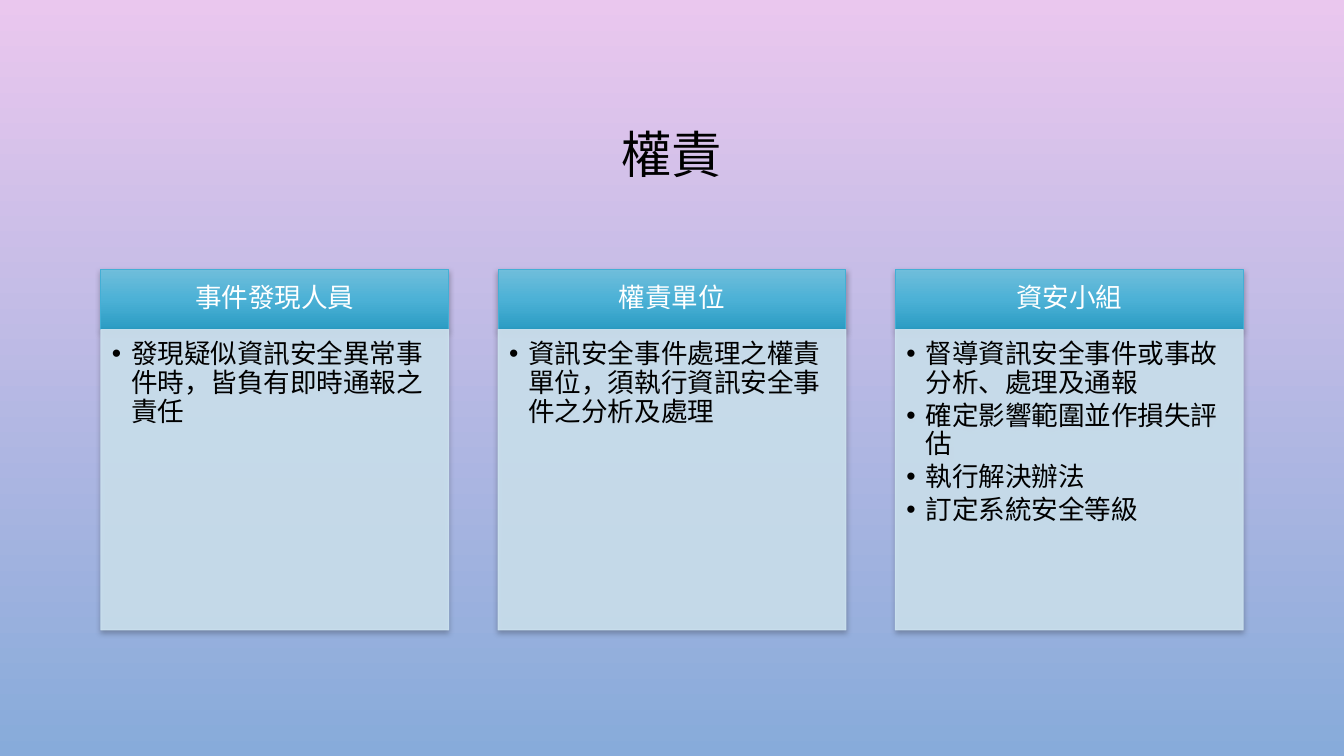
"""Build a slide that sets out who is responsible for security incidents."""
import copy

import lxml.etree
import pptx
import pptx.dml.color
import pptx.enum.shapes
import pptx.enum.text
import pptx.oxml.ns
import pptx.util

Inches, Pt = pptx.util.Inches, pptx.util.Pt
ALIGN, ANCHOR = pptx.enum.text.PP_ALIGN, pptx.enum.text.MSO_ANCHOR
RECTANGLE = pptx.enum.shapes.MSO_SHAPE.RECTANGLE
qn = pptx.oxml.ns.qn
rgb = pptx.dml.color.RGBColor.from_string

COLORS = {
    "sky_top": "EAC7EE", "sky_bottom": "87ABDA",
    "header_top": "70BEDB", "header_middle": "4CB1D6", "header_bottom": "2B9CC3",
    "header_line": "43AFD5", "duties": "CDE3F0",
    "dark": "000000", "light": "FFFFFF",
}
ROLES = [
    ("事件發現人員", ["發現疑似資訊安全異常事件時，皆負有即時通報之責任"]),
    ("權責單位", ["資訊安全事件處理之權責單位，須執行資訊安全事件之分析及處理"]),
    ("資安小組", ["督導資訊安全事件或事故分析、處理及通報", "確定影響範圍並作損失評估",
              "執行解決辦法", "訂定系統安全等級"]),
]
LEFT, TOP, WIDTH, PITCH = 1, 2.67, 3.45, 3.94
HEADER_HEIGHT, DUTIES_HEIGHT = 0.6, 2.98


def write(paragraph, text, size, color, align):
    """Fill a paragraph with one formatted run."""
    paragraph.alignment = align
    paragraph.line_spacing = 0.9
    run = paragraph.add_run()
    run.text = text
    run.font.name = "Arial"
    run.font.size = Pt(size)
    run.font.color.rgb = rgb(COLORS[color])


def set_frame(frame, anchor, left, top, right, bottom):
    """Set wrapping, anchor and insets of a text frame."""
    frame.word_wrap = True
    frame.auto_size = pptx.enum.text.MSO_AUTO_SIZE.NONE
    frame.vertical_anchor = anchor
    frame.margin_left, frame.margin_top = Inches(left), Inches(top)
    frame.margin_right, frame.margin_bottom = Inches(right), Inches(bottom)


deck = pptx.Presentation()
deck.slide_width, deck.slide_height = Inches(13.33), Inches(7.5)
slide = deck.slides.add_slide(deck.slide_layouts[5])

sky = slide.background.fill
sky.gradient()
sky.gradient_angle = 270
for stop, color in zip(sky.gradient_stops, ("sky_top", "sky_bottom")):
    stop.color.rgb = rgb(COLORS[color])

title = slide.shapes.title
title.left, title.top = Inches(1), Inches(0.68)
title.width, title.height = Inches(11.33), Inches(1.75)
set_frame(title.text_frame, ANCHOR.MIDDLE, 0.1, 0.05, 0.1, 0.05)
write(title.text_frame.paragraphs[0], "權責", 36, "dark", ALIGN.CENTER)

for column, (role, duties) in enumerate(ROLES):
    left = Inches(LEFT + column * PITCH)
    header = slide.shapes.add_shape(
        RECTANGLE, left, Inches(TOP), Inches(WIDTH), Inches(HEADER_HEIGHT))
    header.fill.gradient()
    header.fill.gradient_angle = 270
    stop_list = next(header._element.spPr.iter(qn("a:gsLst")))
    stop_list.insert(1, copy.deepcopy(stop_list[0]))
    shades = ("header_top", "header_middle", "header_bottom")
    for step, (stop, color) in enumerate(zip(header.fill.gradient_stops, shades)):
        stop.position = step / 2
        stop.color.rgb = rgb(COLORS[color])
    header.line.color.rgb = rgb(COLORS["header_line"])
    set_frame(header.text_frame, ANCHOR.MIDDLE, 0.15, 0.08, 0.15, 0.08)
    write(header.text_frame.paragraphs[0], role, 19, "light", ALIGN.CENTER)

    panel = slide.shapes.add_shape(
        RECTANGLE, left, Inches(TOP + HEADER_HEIGHT), Inches(WIDTH), Inches(DUTIES_HEIGHT))
    panel.fill.solid()
    panel.fill.fore_color.rgb = rgb(COLORS["duties"])
    panel.line.color.rgb = rgb(COLORS["duties"])
    for tint in panel._element.spPr.iter(qn("a:srgbClr")):
        lxml.etree.SubElement(tint, qn("a:alpha"), val="90000")
    set_frame(panel.text_frame, ANCHOR.TOP, 0.11, 0.11, 0.15, 0.17)
    for row, duty in enumerate(duties):
        paragraph = panel.text_frame.add_paragraph() if row else panel.text_frame.paragraphs[0]
        properties = paragraph._p.get_or_add_pPr()
        properties.set("marL", str(Inches(0.19)))
        properties.set("indent", str(Inches(-0.19)))
        bullet_color = lxml.etree.SubElement(properties, qn("a:buClr"))
        lxml.etree.SubElement(bullet_color, qn("a:srgbClr"), val=COLORS["dark"])
        lxml.etree.SubElement(properties, qn("a:buFont"), typeface="Arial")
        lxml.etree.SubElement(properties, qn("a:buChar"), char="•")
        if row:
            paragraph.space_before = Pt(2.9)
        write(paragraph, duty, 19, "dark", ALIGN.LEFT)

    for card in (header, panel):
        card.line.width = Pt(0.75)
        card.shadow.inherit = False
        effects = card._element.spPr.find(qn("a:effectLst"))
        shadow = lxml.etree.SubElement(
            effects, qn("a:outerShdw"), blurRad=str(Pt(4)), dist=str(Pt(2)),
            dir="5400000", rotWithShape="0")
        shade = lxml.etree.SubElement(shadow, qn("a:srgbClr"), val=COLORS["dark"])
        lxml.etree.SubElement(shade, qn("a:alpha"), val="28000")

deck.save("out.pptx")
